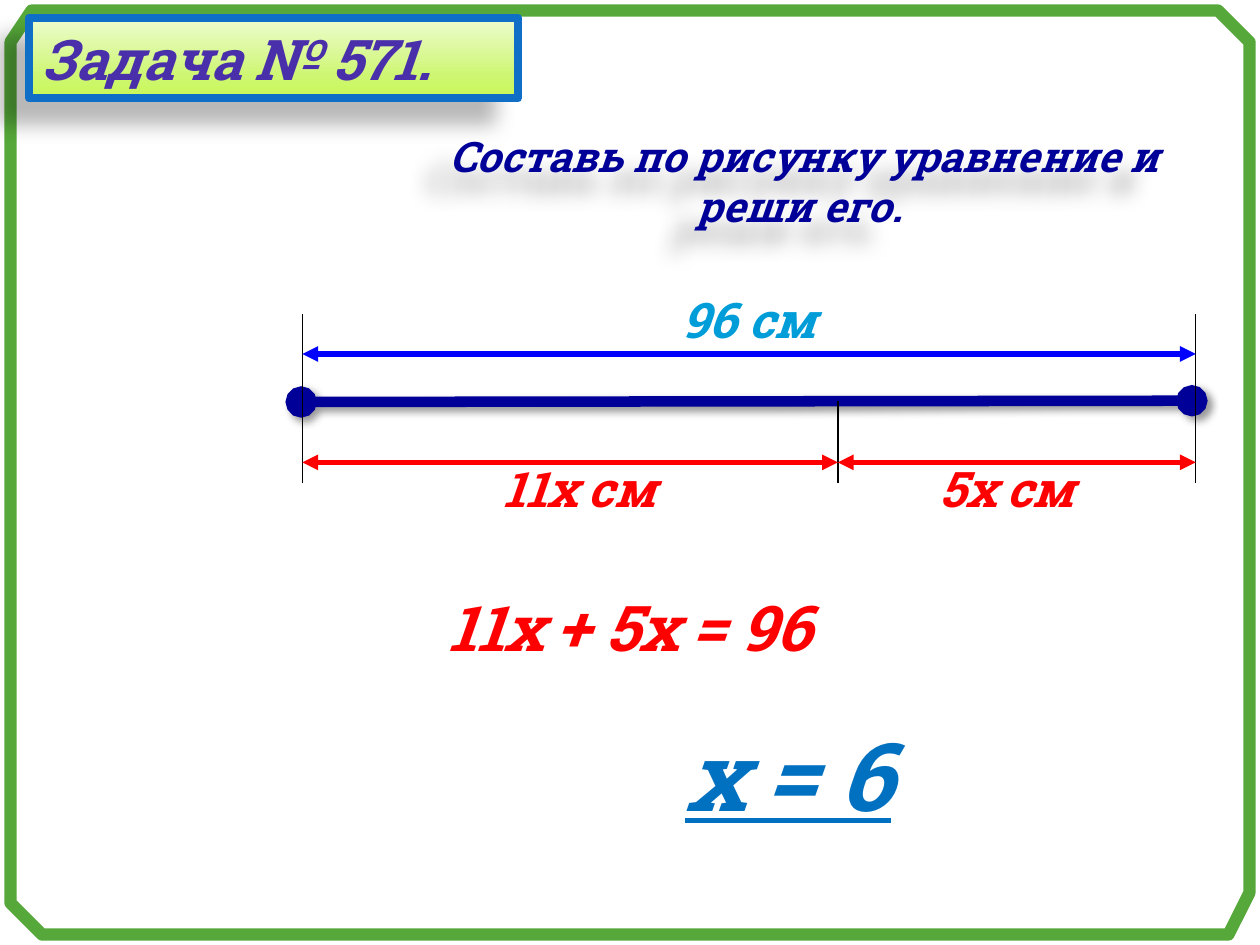
"""Build the slide of task 571: a segment diagram with its equation."""
from copy import deepcopy
from dataclasses import dataclass

from pptx import Presentation
from pptx.dml.color import RGBColor
from pptx.enum import shapes, text
from pptx.oxml import parse_xml
from pptx.oxml.ns import nsdecls, qn
from pptx.util import Pt

FONT = "Roboto Slab"
LEFT, MID, RIGHT = 172.8, 478.8, 683.3
TOP, FOOT, AXIS = 179.3, 275.8, 229.2
RED = "FF0000"
CAST = (28, 11.8, 19.7, 141)


@dataclass
class Label:
    """A line of text with its box."""
    words: str
    box: tuple
    size: float
    tint: str
    mid: bool = False
    under: bool = False


@dataclass
class Line:
    """A straight line with optional ends."""
    start: tuple
    end: tuple
    tint: str = "000000"
    width: float = 0.75
    tip: str = ""
    cast: tuple = ()


LABELS = [
    Label("96 см", (382.3, 162, 102.2, 41), 28, "009DD9"),
    Label("11х см", (280.8, 258.5, 119.5, 41), 28, RED),
    Label("5х см", (529.9, 258.5, 100.8, 41), 28, RED),
    Label("11х + 5х = 96", (190, 332.6, 339.8, 40.3), 36, RED, True),
    Label("х = 6", (382.3, 406, 136, 45.4), 54, "0070C0", True, True),
]
TASK = Label("Составь по рисунку уравнение и реши его. ",
             (224.6, 67.7, 470.2, 65.5), 24, "000099", True)
HEAD = Label("Задача № 571.", (16.6, 10.1, 279.4, 46.1), 32, "4A2FAB")

LINES = [
    Line((172.1, 229.7), (681.1, 229), "000099", 6, "oval", (40, 4, 3, 45)),
    *[Line((x, y), (x, FOOT))
      for x, y in ((RIGHT, TOP), (LEFT, TOP), (MID, AXIS))],
    *[Line((a, y), (b, y), tint, 3, "triangle")
      for a, b, y, tint in ((LEFT, RIGHT, 202.3, "0000FF"),
                            (LEFT, MID, 264.2, RED),
                            (MID, RIGHT, 264.2, RED))],
]
FRAME = [(6, 24), (6, 516), (24, 534), (702, 534), (714, 510),
         (714, 24), (696, 6), (18, 6)]
STOPS = [(0, "EDFCCF"), (0.72, "CEF673"), (1, "C9F853")]


def color(code: str) -> RGBColor:
    """Turn a hex string into a colour."""
    return RGBColor.from_string(code)


def effect(shape, cast: tuple = ()) -> None:
    """Give a shape an outer shadow, or none at all."""
    props = shape._element.spPr
    for old in props.findall(qn("a:effectLst")):
        props.remove(old)
    body = ""
    if cast:
        alpha, blur, dist, ang = cast
        body = (f'<a:outerShdw blurRad="{Pt(blur)}" dist="{Pt(dist)}" '
                f'dir="{ang * 60000}" algn="tl" rotWithShape="0">'
                f'<a:srgbClr val="000000"><a:alpha val="{alpha * 1000}"/>'
                '</a:srgbClr></a:outerShdw>')
    props.append(parse_xml(
        f'<a:effectLst {nsdecls("a")}>{body}</a:effectLst>'))


def stroke(line, tint: str, width: float) -> None:
    """Set the colour and width of a line."""
    line.color.rgb = color(tint)
    line.width = Pt(width)


def write(shape, item: Label, wrap: bool, anchor) -> None:
    """Put the text of a label into a shape."""
    frame = shape.text_frame
    look = {"word_wrap": wrap, "auto_size": text.MSO_AUTO_SIZE.NONE,
            "vertical_anchor": anchor}
    for key, val in look.items():
        setattr(frame, key, val)
    para = frame.paragraphs[0]
    para.alignment = text.PP_ALIGN.CENTER if item.mid else text.PP_ALIGN.LEFT
    run = para.add_run()
    run.text = item.words
    form = {"name": FONT, "size": Pt(item.size), "bold": True,
            "italic": True, "underline": item.under}
    for key, val in form.items():
        setattr(run.font, key, val)
    run.font.color.rgb = color(item.tint)


def border(slide) -> None:
    """Draw the cut-corner frame round the slide."""
    dots = [(Pt(x), Pt(y)) for x, y in FRAME]
    pen = slide.shapes.build_freeform(*dots[0])
    pen.add_line_segments(dots[1:], close=True)
    shape = pen.convert_to_shape()
    shape.fill.background()
    stroke(shape.line, "55A839", 7)
    shape.line._get_or_add_ln().append(parse_xml(f'<a:round {nsdecls("a")}/>'))
    effect(shape)


def callout(slide) -> None:
    """Write the task in an unfilled callout."""
    kind = shapes.MSO_SHAPE.ROUNDED_RECTANGULAR_CALLOUT
    shape = slide.shapes.add_shape(kind, *map(Pt, TASK.box))
    for num, val in enumerate((-0.676, 1.415, 0.167)):
        shape.adjustments[num] = val
    shape.fill.background()
    shape.line.fill.background()
    effect(shape, CAST)
    write(shape, TASK, True, text.MSO_ANCHOR.TOP)


def rule(slide, item: Line) -> None:
    """Draw one straight line."""
    link = slide.shapes.add_connector(
        shapes.MSO_CONNECTOR.STRAIGHT, *map(Pt, item.start + item.end))
    stroke(link.line, item.tint, item.width)
    if item.tip:
        for end in ("headEnd", "tailEnd"):
            link.line._get_or_add_ln().append(parse_xml(
                f'<a:{end} {nsdecls("a")} type="{item.tip}"/>'))
    effect(link, item.cast)


def label(slide, item: Label) -> None:
    """Add one text box."""
    box = slide.shapes.add_textbox(*map(Pt, item.box))
    write(box, item, False, text.MSO_ANCHOR.TOP)


def title(slide) -> None:
    """Format the title placeholder and bring it to the front."""
    shape = slide.shapes.title
    for key, val in zip(("left", "top", "width", "height"), HEAD.box):
        setattr(shape, key, Pt(val))
    shape.fill.gradient()
    shape.fill.gradient_angle = 270
    stops = shape._element.spPr.find(".//" + qn("a:gsLst"))
    stops.insert(1, deepcopy(stops[0]))
    for stop, (pos, tint) in zip(shape.fill.gradient_stops, STOPS):
        stop.position = pos
        stop.color.rgb = color(tint)
    stroke(shape.line, "0F6FC6", 4.5)
    effect(shape, CAST)
    write(shape, HEAD, True, text.MSO_ANCHOR.MIDDLE)
    slide.shapes._spTree.append(shape._element)


def main() -> None:
    """Build and save the deck."""
    deck = Presentation()
    deck.slide_width, deck.slide_height = Pt(720), Pt(540)
    slide = deck.slides.add_slide(deck.slide_layouts[5])
    border(slide)
    callout(slide)
    for item in LINES:
        rule(slide, item)
    for item in LABELS:
        label(slide, item)
    title(slide)
    deck.save("out.pptx")


if __name__ == "__main__":
    main()
